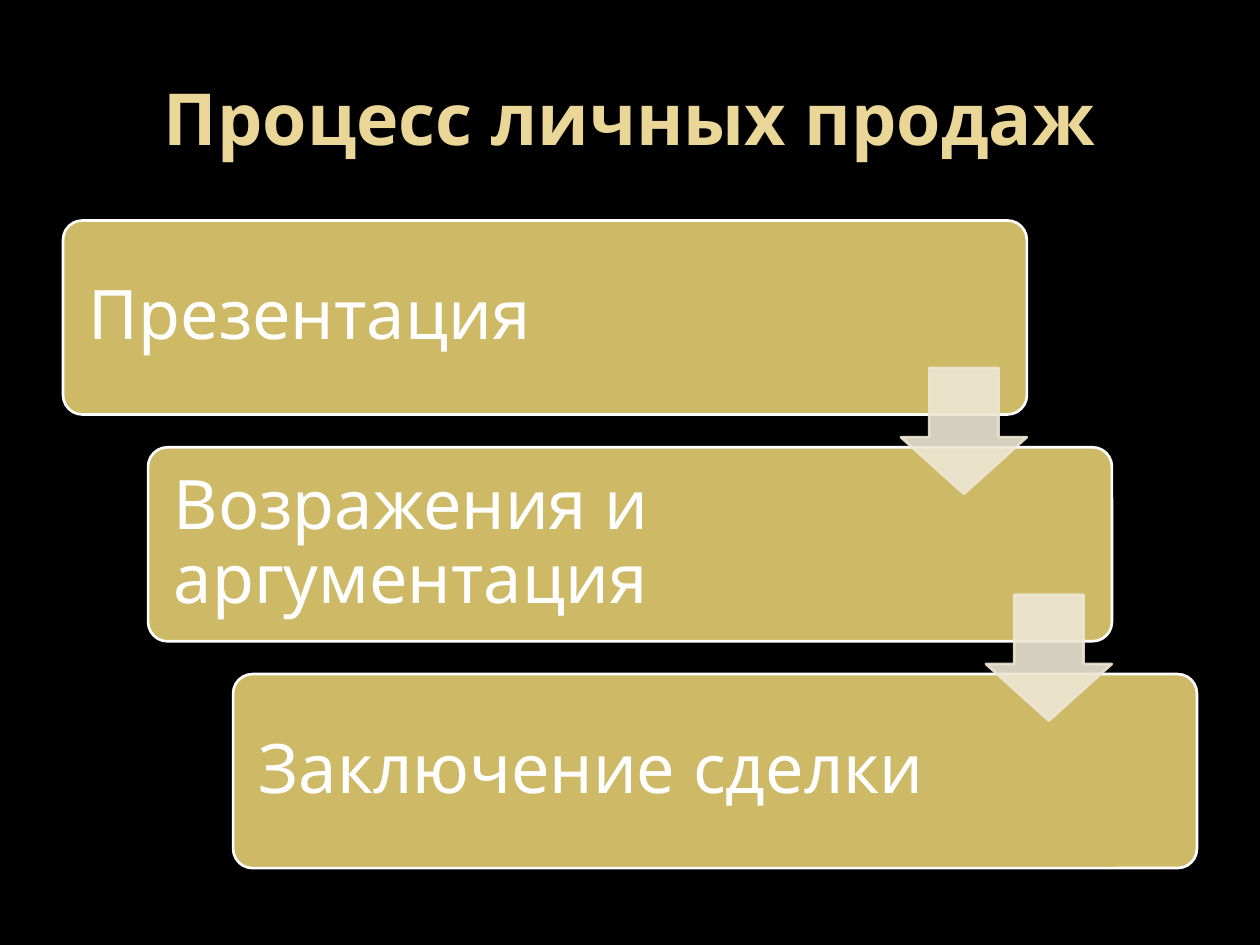
from dataclasses import dataclass

from lxml import etree
from pptx import Presentation
from pptx.dml.color import RGBColor
from pptx.enum.shapes import MSO_SHAPE
from pptx.enum.text import MSO_ANCHOR, PP_ALIGN
from pptx.oxml.ns import qn
from pptx.util import Inches, Pt

ROUNDED, DOWN_ARROW = MSO_SHAPE.ROUNDED_RECTANGLE, MSO_SHAPE.DOWN_ARROW
MIDDLE, LEFT, CENTER = MSO_ANCHOR.MIDDLE, PP_ALIGN.LEFT, PP_ALIGN.CENTER

SLIDE_WIDTH, SLIDE_HEIGHT = 10, 7.5
MARGIN = 0.05 * SLIDE_WIDTH
CONTENT_WIDTH = SLIDE_WIDTH - 2 * MARGIN
CARD_WIDTH, CARD_HEIGHT = 0.85 * CONTENT_WIDTH, 1.54
FIRST_ROW, ROW_STEP = 1.75, 1.8
ARROW_SIZE, ARROW_DROP = 1, 1.17
STEPS = ["Презентация", "Возражения и аргументация", "Заключение сделки"]


@dataclass(frozen=True)
class Theme:
    """Colours, font and sizes of the slide."""

    background: str = "000000"
    title: str = "EAD696"
    card: str = "CEB966"
    text: str = "FFFFFF"
    arrow: str = "EDE6D3"
    arrow_opacity: int = 90
    font: str = "Noto Sans"
    title_size: int = 41
    card_size: int = 39
    outline: float = 1.5


THEME = Theme()


def write_text(shape, text, *, size, color, bold=False, align=LEFT, spacing=1.0, insets=None):
    """Write one formatted paragraph, centred vertically, into a shape."""
    frame = shape.text_frame
    frame.word_wrap = True
    frame.vertical_anchor = MIDDLE
    if insets:
        (frame.margin_left, frame.margin_top,
         frame.margin_right, frame.margin_bottom) = map(Inches, insets)
    paragraph = frame.paragraphs[0]
    paragraph.alignment = align
    paragraph.line_spacing = spacing
    run = paragraph.add_run()
    run.text = text
    run.font.name = THEME.font
    run.font.size = Pt(size)
    run.font.bold = bold
    run.font.color.rgb = RGBColor.from_string(color)


def add_block(slide, kind, box, adjustments, fill, line):
    """Add a filled and outlined preset shape."""
    shape = slide.shapes.add_shape(kind, *map(Inches, box))
    shape.shadow.inherit = False
    for index, value in enumerate(adjustments):
        shape.adjustments[index] = value
    shape.fill.solid()
    shape.fill.fore_color.rgb = RGBColor.from_string(fill)
    shape.line.color.rgb = RGBColor.from_string(line)
    shape.line.width = Pt(THEME.outline)
    return shape


def set_opacity(shape, percent):
    """Make the fill and the outline of a shape partly transparent."""
    for color in shape.element.spPr.iter(qn("a:srgbClr")):
        etree.SubElement(color, qn("a:alpha"), val=str(percent * 1000))


def card_corner(index):
    """Return the left and top of a card on the staircase."""
    column_step = (CONTENT_WIDTH - CARD_WIDTH) / (len(STEPS) - 1)
    return MARGIN + index * column_step, FIRST_ROW + index * ROW_STEP


def add_title(slide, text):
    """Add the slide title."""
    title = slide.shapes.add_textbox(
        *map(Inches, (MARGIN, 0.04 * SLIDE_HEIGHT, CONTENT_WIDTH, 1.25)))
    write_text(title, text, size=THEME.title_size, color=THEME.title, bold=True, align=CENTER)


def add_card(slide, index, text):
    """Add one step of the process."""
    box = (*card_corner(index), CARD_WIDTH, CARD_HEIGHT)
    card = add_block(slide, ROUNDED, box, [0.1], THEME.card, THEME.text)
    write_text(card, text, size=THEME.card_size, color=THEME.text,
               spacing=0.9, insets=(0.16, 0.16, 1.8, 0.16))


def add_arrow(slide, index):
    """Add the arrow that leads from a card to the next one."""
    left, top = card_corner(index)
    box = (left + CARD_WIDTH - ARROW_SIZE, top + ARROW_DROP, ARROW_SIZE, ARROW_SIZE)
    arrow = add_block(slide, DOWN_ARROW, box, [0.55, 0.45], THEME.arrow, THEME.arrow)
    set_opacity(arrow, THEME.arrow_opacity)


def main():
    """Build and save the presentation."""
    presentation = Presentation()
    presentation.slide_width = Inches(SLIDE_WIDTH)
    presentation.slide_height = Inches(SLIDE_HEIGHT)
    slide = presentation.slides.add_slide(presentation.slide_layouts[6])
    slide.background.fill.solid()
    slide.background.fill.fore_color.rgb = RGBColor.from_string(THEME.background)
    add_title(slide, "Процесс личных продаж")
    for index, text in enumerate(STEPS):
        add_card(slide, index, text)
    for index in range(len(STEPS) - 1):
        add_arrow(slide, index)
    presentation.save("out.pptx")


if __name__ == "__main__":
    main()
